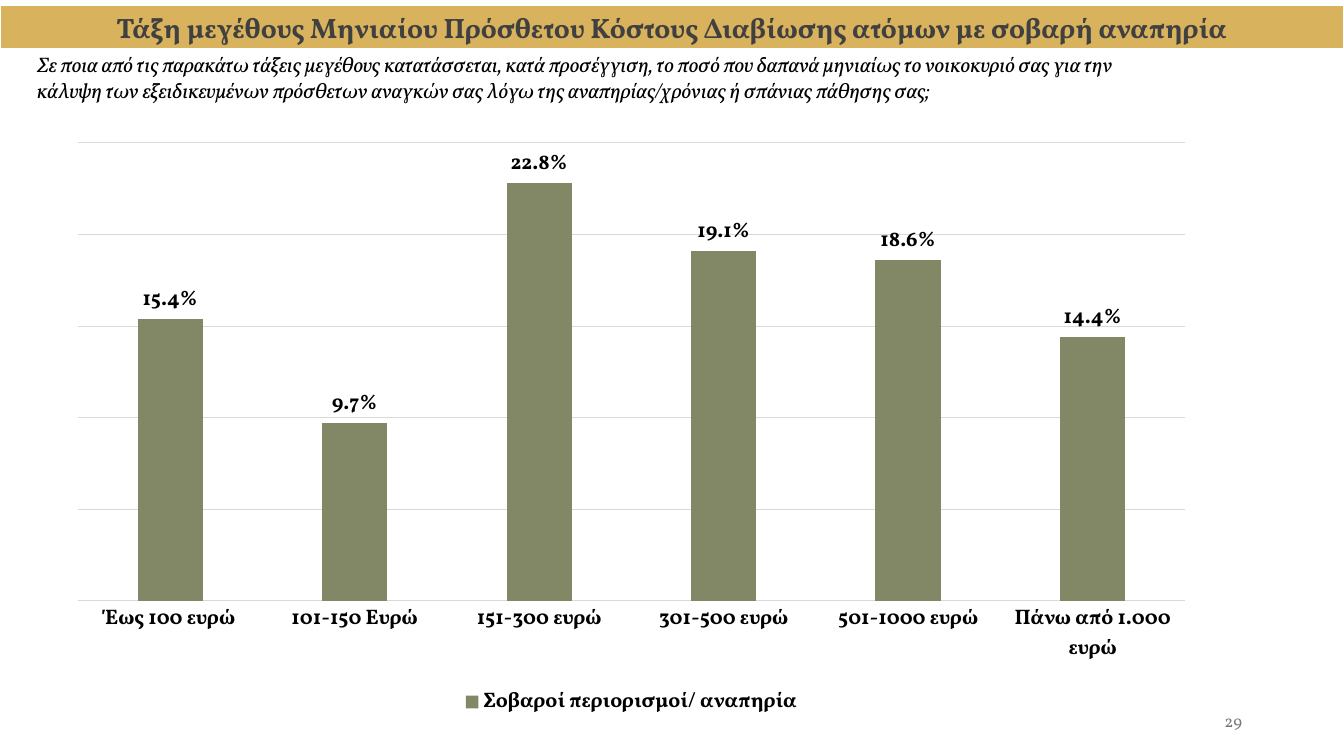
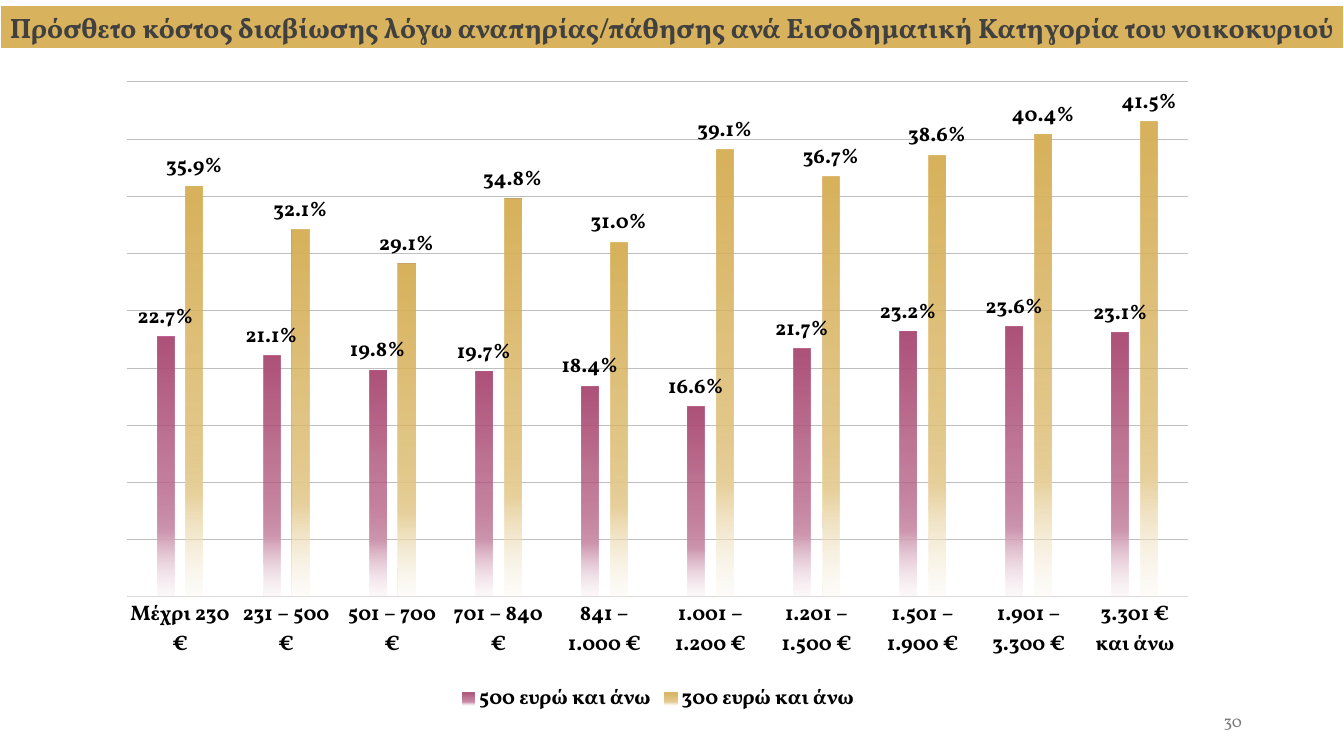
from dataclasses import dataclass

from lxml import etree
from pptx import Presentation
from pptx.chart.data import CategoryChartData
from pptx.dml.color import RGBColor
from pptx.enum.chart import XL_CHART_TYPE, XL_LABEL_POSITION, XL_LEGEND_POSITION, XL_TICK_MARK
from pptx.enum.text import MSO_ANCHOR, MSO_AUTO_SIZE, PP_ALIGN
from pptx.oxml.ns import qn
from pptx.util import Emu, Pt

COLUMNS = XL_CHART_TYPE.COLUMN_CLUSTERED
OUTSIDE_END = XL_LABEL_POSITION.OUTSIDE_END
LEGEND_BOTTOM = XL_LEGEND_POSITION.BOTTOM
NO_TICK = XL_TICK_MARK.NONE
TOP, MIDDLE = MSO_ANCHOR.TOP, MSO_ANCHOR.MIDDLE
NO_AUTO_SIZE = MSO_AUTO_SIZE.NONE
LEFT, CENTER, RIGHT = PP_ALIGN.LEFT, PP_ALIGN.CENTER, PP_ALIGN.RIGHT

SLIDE_WIDTH, SLIDE_HEIGHT = 1344, 756
EMU_PER_PX = 12192000 / SLIDE_WIDTH
TITLE_ONLY = 5


@dataclass(frozen=True)
class Theme:
    font: str = "Vollkorn"
    gold: str = "D8B25C"
    white: str = "FFFFFF"
    black: str = "000000"
    title_text: str = "404040"
    page_text: str = "797979"
    olive: str = "828766"
    axis: str = "D9D9D9"
    dark_grid: str = "BFBFBF"
    title_size: int = 20
    body_size: int = 15
    page_size: int = 12
    band_line: int = 2
    thin_line: float = 0.75


THEME = Theme()

# Gradient stops: position %, colour, opacity %
PLUM_FADE = [(0, "AE5279", 100), (51, "AE5279", 75), (75, "CE97AF", 100), (100, "EFDCE4", 15)]
GOLD_FADE = [(0, THEME.gold, 100), (51, THEME.gold, 75), (75, "E8D19D", 100), (100, "F7F0DE", 15)]

TITLE_BOX = (0, 5, SLIDE_WIDTH, 44)
PAGE_BOX = (950, 701, 302, 40)

COST_SLIDE = {
    "title": "Τάξη μεγέθους Μηνιαίου Πρόσθετου Κόστους Διαβίωσης ατόμων με σοβαρή αναπηρία",
    "page": "29",
    "question": "Σε ποια από τις παρακάτω τάξεις μεγέθους κατατάσσεται, κατά προσέγγιση, "
                "το ποσό που δαπανά μηνιαίως το νοικοκυριό σας για την κάλυψη των "
                "εξειδικευμένων πρόσθετων αναγκών σας λόγω της αναπηρίας/χρόνιας ή "
                "σπάνιας πάθησης σας;",
    "question_box": (27, 47, 1143, 62),
    "chart": {
        "box": (55, 132, 1153, 589),
        "plot": (23, 11, 1107, 458),
        "categories": ["Έως 100 ευρώ", "101-150 Ευρώ", "151-300 ευρώ", "301-500 ευρώ",
                       "501-1000 ευρώ", "Πάνω από 1.000 ευρώ"],
        "series": [("Σοβαροί περιορισμοί/ αναπηρία", THEME.olive,
                    [0.154, 0.097, 0.228, 0.191, 0.186, 0.144])],
        "maximum": 0.25, "gap": 182, "overlap": 0, "grid": THEME.axis,
    },
}

INCOME_SLIDE = {
    "title": "Πρόσθετο κόστος διαβίωσης λόγω αναπηρίας/πάθησης ανά Εισοδηματική "
             "Κατηγορία του νοικοκυριού",
    "page": "30",
    "chart": {
        "box": (105, 70, 1106, 648),
        "plot": (22, 12, 1061, 515),
        "categories": ["Μέχρι 230 €", "231 – 500 €", "501 – 700 €", "701 – 840 €",
                       "841 – 1.000 €", "1.001 – 1.200 €", "1.201 – 1.500 €",
                       "1.501 – 1.900 €", "1.901 – 3.300 €", "3.301 € και άνω"],
        "series": [
            ("500 ευρώ και άνω", PLUM_FADE,
             [0.227, 0.211, 0.198, 0.197, 0.184, 0.166, 0.217, 0.232, 0.236, 0.231]),
            ("300 ευρώ και άνω", GOLD_FADE,
             [0.359, 0.321, 0.291, 0.348, 0.31, 0.391, 0.367, 0.386, 0.404, 0.415]),
        ],
        "maximum": 0.45, "gap": 355, "overlap": -70, "grid": THEME.dark_grid,
    },
}


def px(length):
    return Emu(round(length * EMU_PER_PX))


def set_attributes(target, values):
    for name, value in values.items():
        setattr(target, name, value)


def format_font(font, size, color, bold=False, italic=False):
    set_attributes(font, {"name": THEME.font, "size": Pt(size), "bold": bold, "italic": italic})
    font.color.rgb = RGBColor.from_string(color)


def format_line(line, color, width):
    line.color.rgb = RGBColor.from_string(color)
    line.width = Pt(width)


def place(shape, box):
    set_attributes(shape, dict(zip(("left", "top", "width", "height"), map(px, box))))


def write_text(shape, text, alignment, anchor, **font_values):
    frame = shape.text_frame
    set_attributes(frame, {"word_wrap": True, "auto_size": NO_AUTO_SIZE,
                           "vertical_anchor": anchor})
    paragraph = frame.paragraphs[0]
    paragraph.alignment = alignment
    run = paragraph.add_run()
    run.text = text
    format_font(run.font, **font_values)


# Title band, question and page number
def add_title_band(slide, box, text):
    title = slide.shapes.title
    place(title, box)
    title.fill.solid()
    title.fill.fore_color.rgb = RGBColor.from_string(THEME.gold)
    format_line(title.line, THEME.white, THEME.band_line)
    write_text(title, text, CENTER, MIDDLE, size=THEME.title_size,
               color=THEME.title_text, bold=True)
    set_attributes(title.text_frame, dict.fromkeys(
        ("margin_left", "margin_right", "margin_top", "margin_bottom"), 0))


def add_text_box(slide, box, text, alignment, anchor, **font_values):
    shape = slide.shapes.add_textbox(*map(px, box))
    write_text(shape, text, alignment, anchor, **font_values)


# Chart parts
def set_plot_layout(chart, box, plot):
    plot_area = chart._chartSpace.find(".//" + qn("c:plotArea"))
    for layout in plot_area.findall(qn("c:layout")):
        plot_area.remove(layout)
    layout = etree.Element(qn("c:layout"))
    plot_area.insert(0, layout)
    manual = etree.SubElement(layout, qn("c:manualLayout"))
    values = {"layoutTarget": "inner", "xMode": "edge", "yMode": "edge"}
    sizes = (box[2], box[3]) * 2
    for name, length, whole in zip("xywh", plot, sizes):
        values[name] = str(length / whole)
    for name, value in values.items():
        etree.SubElement(manual, qn("c:" + name)).set("val", value)


def fill_gradient(series, stops):
    properties = series._element.get_or_add_spPr()
    gradient = etree.SubElement(properties, qn("a:gradFill"), rotWithShape="1")
    stop_list = etree.SubElement(gradient, qn("a:gsLst"))
    for position, color, opacity in stops:
        stop = etree.SubElement(stop_list, qn("a:gs"), pos=str(position * 1000))
        rgb = etree.SubElement(stop, qn("a:srgbClr"), val=color)
        if opacity < 100:
            etree.SubElement(rgb, qn("a:alpha"), val=str(opacity * 1000))
    etree.SubElement(gradient, qn("a:lin"), ang="5400000", scaled="0")


def fill_series(series, fill):
    if isinstance(fill, str):
        series.format.fill.solid()
        series.format.fill.fore_color.rgb = RGBColor.from_string(fill)
    else:
        fill_gradient(series, fill)


def format_axes(chart, maximum, grid):
    category_axis, value_axis = chart.category_axis, chart.value_axis
    set_attributes(category_axis, {"major_tick_mark": NO_TICK, "minor_tick_mark": NO_TICK})
    format_line(category_axis.format.line, THEME.axis, THEME.thin_line)
    set_attributes(value_axis, {"minimum_scale": 0, "maximum_scale": maximum,
                                "major_unit": 0.05, "visible": False,
                                "has_major_gridlines": True})
    format_line(value_axis.major_gridlines.format.line, grid, THEME.thin_line)


def add_column_chart(slide, box, plot, categories, series, maximum, gap, overlap, grid):
    data = CategoryChartData(number_format="0.0%")
    data.categories = categories
    for name, _, values in series:
        data.add_series(name, values)
    chart = slide.shapes.add_chart(COLUMNS, *map(px, box), data).chart
    format_font(chart.font, THEME.body_size, THEME.black, bold=True)
    set_attributes(chart, {"has_title": False, "has_legend": True})
    set_attributes(chart.legend, {"position": LEGEND_BOTTOM, "include_in_layout": False})
    format_axes(chart, maximum, grid)

    columns = chart.plots[0]
    set_attributes(columns, {"gap_width": gap, "overlap": overlap,
                             "vary_by_categories": False, "has_data_labels": True})
    labels = columns.data_labels
    set_attributes(labels, {"show_value": True, "position": OUTSIDE_END,
                            "number_format": "0.0%", "number_format_is_linked": False})
    format_font(labels.font, THEME.body_size, THEME.black, bold=True)
    for column_series, (_, fill, _) in zip(columns.series, series):
        fill_series(column_series, fill)
    set_plot_layout(chart, box, plot)


def add_chart_slide(presentation, content):
    slide = presentation.slides.add_slide(presentation.slide_layouts[TITLE_ONLY])
    add_title_band(slide, TITLE_BOX, content["title"])
    add_column_chart(slide, **content["chart"])
    if "question" in content:
        add_text_box(slide, content["question_box"], content["question"], LEFT, TOP,
                     size=THEME.body_size, color=THEME.black, italic=True)
    add_text_box(slide, PAGE_BOX, content["page"], RIGHT, MIDDLE,
                 size=THEME.page_size, color=THEME.page_text)


def main():
    presentation = Presentation()
    set_attributes(presentation, {"slide_width": px(SLIDE_WIDTH),
                                  "slide_height": px(SLIDE_HEIGHT)})
    for content in (COST_SLIDE, INCOME_SLIDE):
        add_chart_slide(presentation, content)
    presentation.save("out.pptx")


if __name__ == "__main__":
    main()
